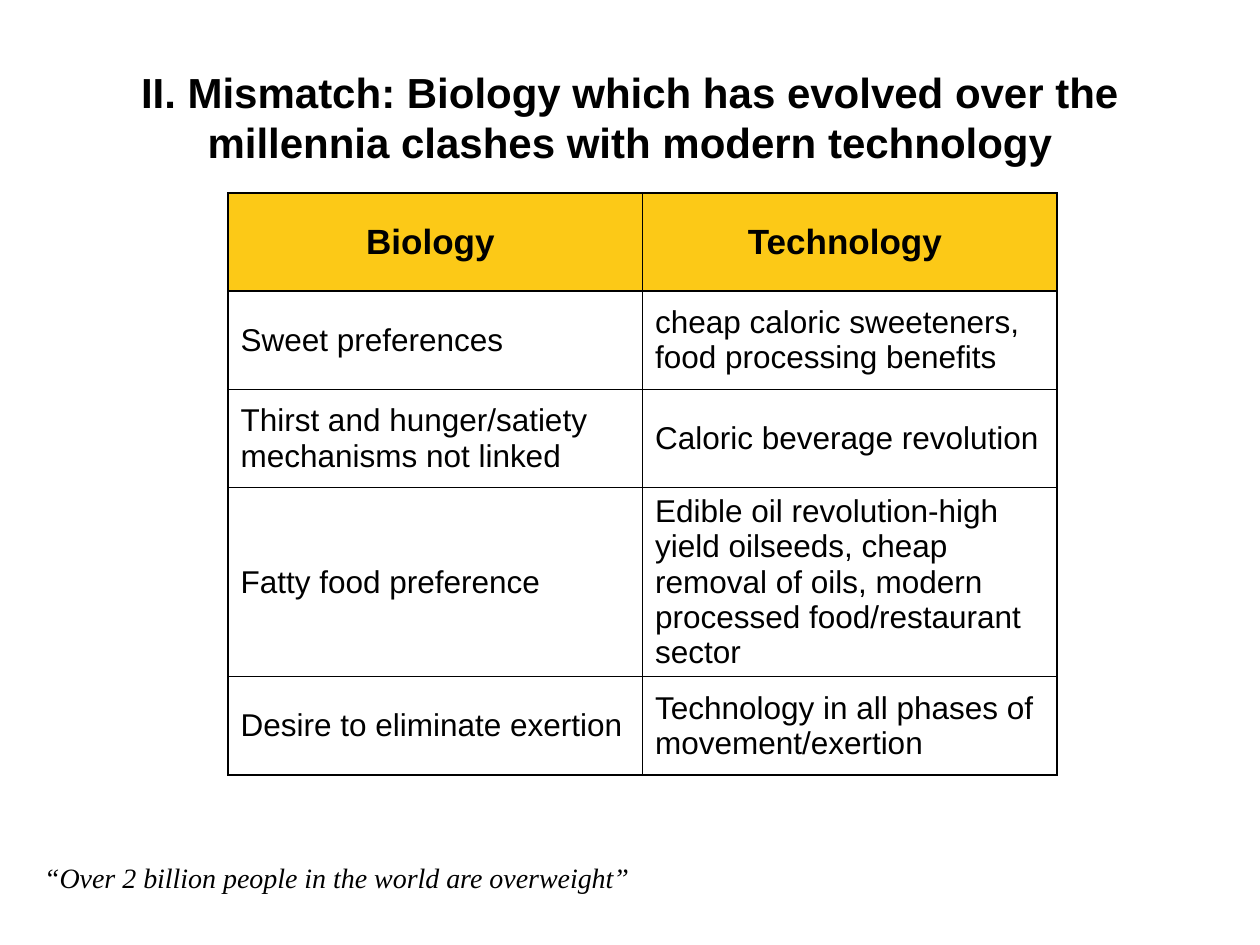
from lxml.etree import SubElement
from pptx import Presentation
from pptx.dml.color import RGBColor
from pptx.enum.text import MSO_ANCHOR, PP_ALIGN
from pptx.oxml.ns import qn
from pptx.util import Inches, Pt

BLACK = RGBColor(0x00, 0x00, 0x00)
WHITE = RGBColor(0xFF, 0xFF, 0xFF)
GOLD = RGBColor(0xFC, 0xC9, 0x17)

TITLE = ("II. Mismatch: Biology which has evolved over the millennia "
         "clashes with modern technology")
QUOTE = "“Over 2 billion people in the world are overweight”"
ROWS = [
    ("Biology ", "Technology "),
    ("Sweet preferences", "cheap caloric sweeteners, food processing benefits"),
    ("Thirst and hunger/satiety mechanisms not linked", "Caloric beverage revolution"),
    ("Fatty food preference",
     "Edible oil revolution-high yield oilseeds, cheap removal of oils, "
     "modern processed food/restaurant sector"),
    ("Desire to eliminate exertion", "Technology in all phases of movement/exertion"),
]
COLUMN_WIDTH, ROW_HEIGHT = 3.29, 0.78


def write(frame, text, size, font="Arial", bold=False, italic=False, align=PP_ALIGN.LEFT):
    frame.word_wrap = True
    para = frame.paragraphs[0]
    para.alignment = align
    span = para.add_run()
    span.text = text
    span.font.name = font
    span.font.size = Pt(size)
    span.font.bold = bold
    span.font.italic = italic
    span.font.color.rgb = BLACK


def add_borders(cell):
    """Draw a 1 pt line on all four sides, ahead of the cell's fill."""
    properties = cell._tc.get_or_add_tcPr()
    for position, side in enumerate(("a:lnL", "a:lnR", "a:lnT", "a:lnB")):
        line = SubElement(properties, qn(side), w=str(Pt(1)))
        fill = SubElement(line, qn("a:solidFill"))
        SubElement(fill, qn("a:srgbClr"), val=str(BLACK))
        properties.insert(position, line)


def add_comparison(page):
    count = len(ROWS)
    frame = page.shapes.add_table(
        count, 2, Inches(1.81), Inches(1.53),
        Inches(2 * COLUMN_WIDTH), Inches(count * ROW_HEIGHT))
    table = frame.table
    for row_index, texts in enumerate(ROWS):
        header = row_index == 0
        for column_index, text in enumerate(texts):
            cell = table.cell(row_index, column_index)
            cell.vertical_anchor = MSO_ANCHOR.MIDDLE
            cell.fill.solid()
            cell.fill.fore_color.rgb = GOLD if header else WHITE
            add_borders(cell)
            write(cell.text_frame, text, 20 if header else 18, bold=header,
                  align=PP_ALIGN.CENTER if header else PP_ALIGN.LEFT)


def main():
    deck = Presentation()
    deck.slide_width, deck.slide_height = Inches(10), Inches(7.5)
    page = deck.slides.add_slide(deck.slide_layouts[5])

    title = page.shapes.title
    title.left, title.top = Inches(0.5), Inches(0.3)
    title.width, title.height = Inches(9), Inches(1.25)
    title.text_frame.vertical_anchor = MSO_ANCHOR.MIDDLE
    write(title.text_frame, TITLE, 24, bold=True, align=PP_ALIGN.CENTER)

    add_comparison(page)

    quote = page.shapes.add_textbox(0, Inches(6.67), deck.slide_width, Inches(0.58))
    quote.text_frame.vertical_anchor = MSO_ANCHOR.MIDDLE
    quote.text_frame.margin_left = Inches(0.35)
    write(quote.text_frame, QUOTE, 16, font="Times New Roman", italic=True)

    deck.save("out.pptx")


if __name__ == "__main__":
    main()
